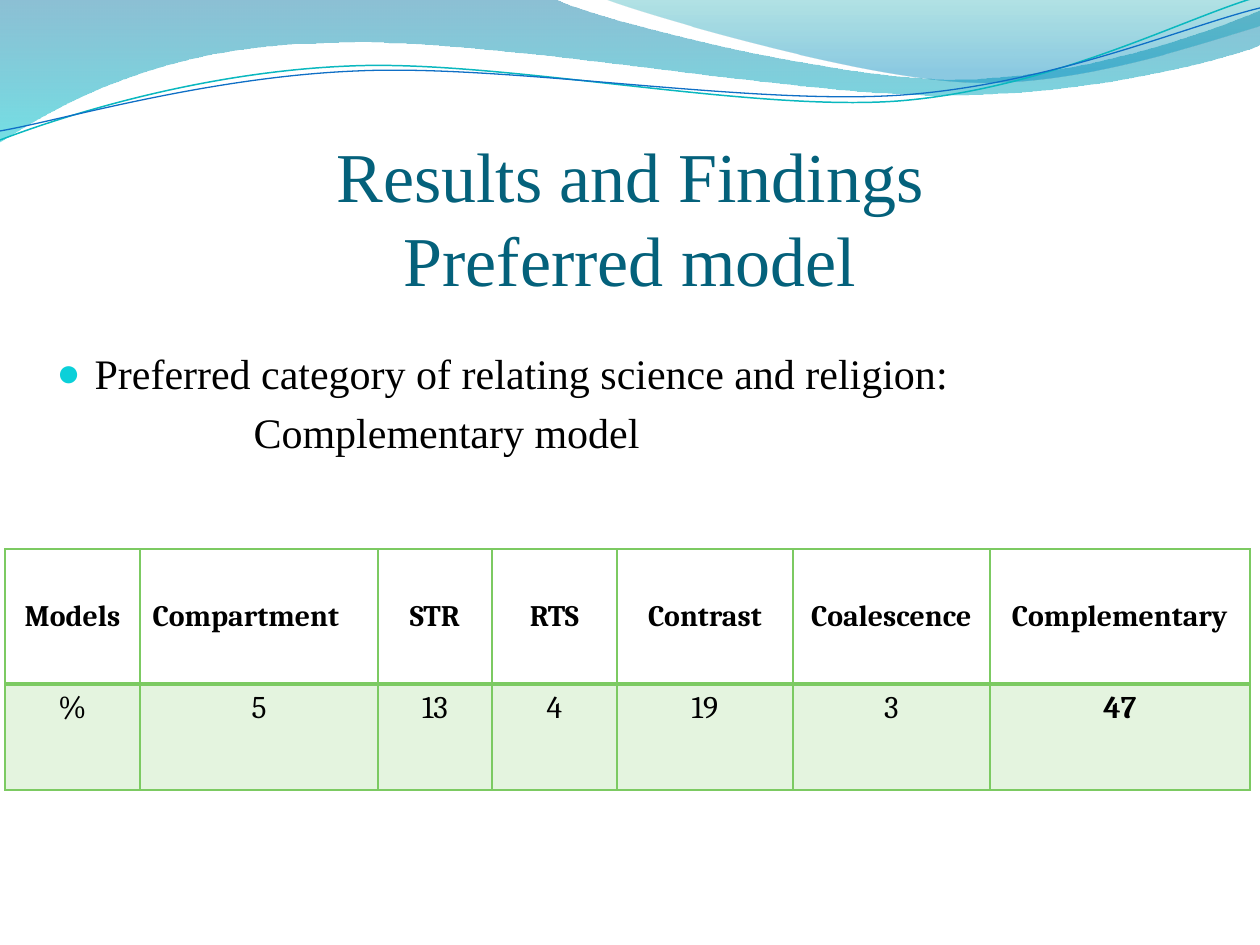
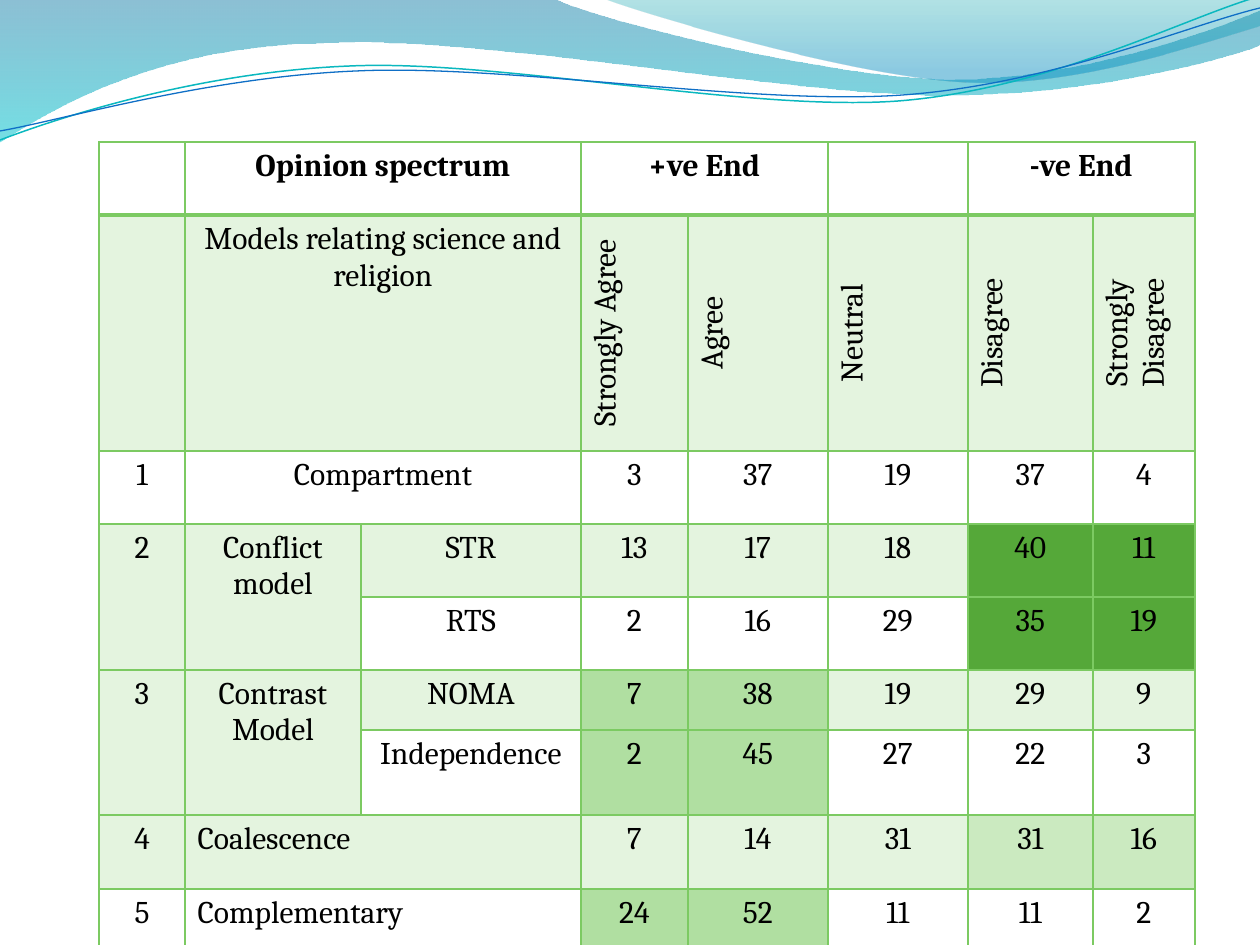
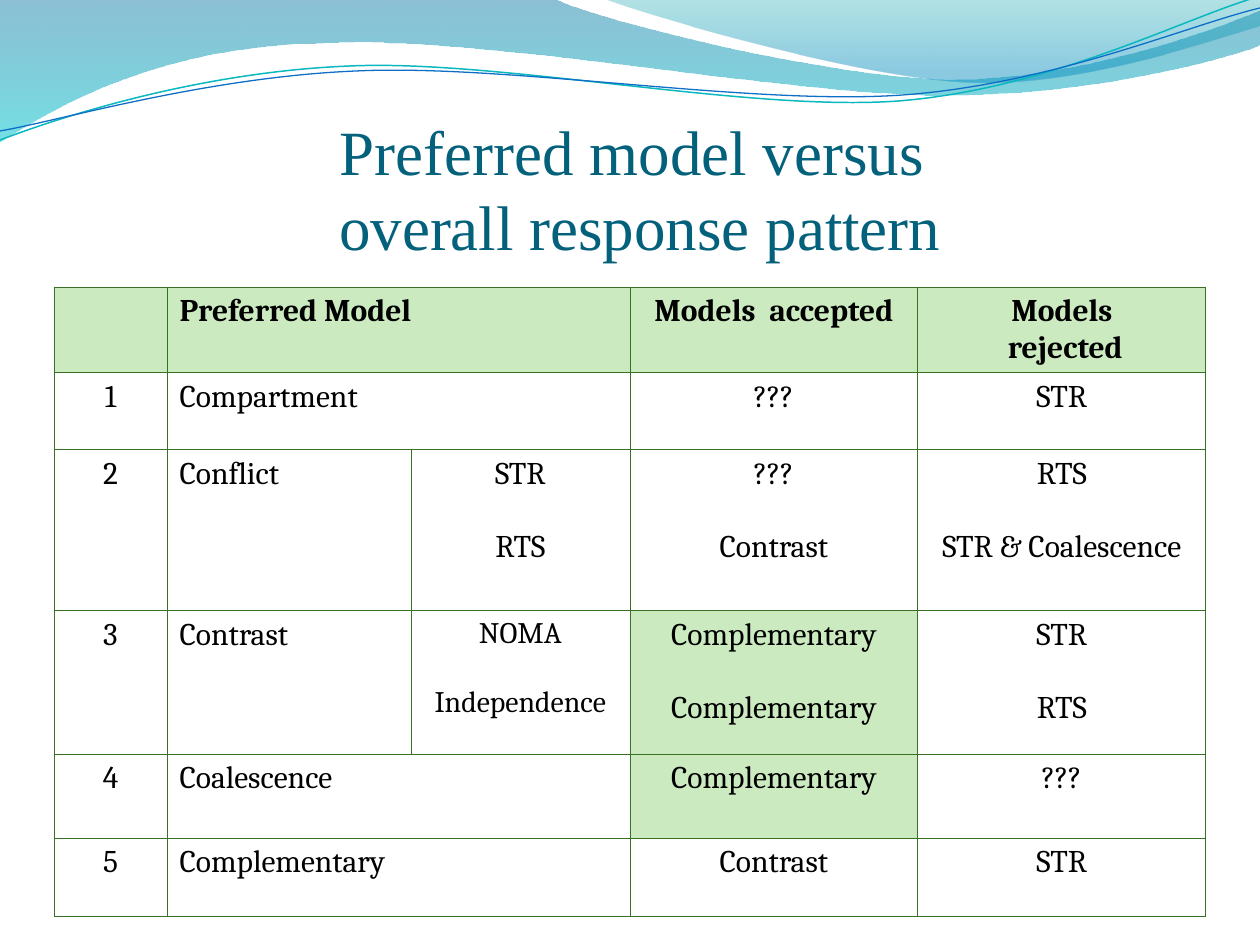
from lxml import etree
from pptx import Presentation
from pptx import util as u
from pptx.dml.color import RGBColor
from pptx.enum import text
from pptx.oxml.ns import qn

PX = 914400 / 126
COLORS = {
    "title": "04617B", "ink": "000000", "bullet": "0BD0D9",
    "leaf": "7CCA62", "pale": "CBEAC0", "mid": "B0DFA1", "deep": "55A839", "forest": "387026",
    "sea": "0074A1", "aqua": "00C6CF", "teal": "00A1A9", "sky": "008BBF",
    "thread": "0AB8BF", "blue": "0F6FC6",
}
SERIF, TABLE_FONT = "Times New Roman", "Cambria"
ALIGN = {"l": text.PP_ALIGN.LEFT, "c": text.PP_ALIGN.CENTER, "j": text.PP_ALIGN.JUSTIFY}
ANCHOR = {"t": text.MSO_ANCHOR.TOP, "m": text.MSO_ANCHOR.MIDDLE, "b": text.MSO_ANCHOR.BOTTOM}
ACROSS, DOWN = "<", "^"  # cells covered by the cell to the left or above

# Wave outlines: a pair is a line's end, six numbers are a Bezier curve
WAVES = [
    ([(0, 0), (554, -1), (600, 21, 837, 79, 955, 79), (1075, 79, 1207, 33, 1260, 11),
      (1261, 45), (1239, 55, 1096, 96, 940, 95), (784, 95, 481, 35, 324, 43),
      (163, 45, 58, 105, -1, 142), (0, 0)],
     [("sea", 0, 45), ("aqua", 1, 55)]),
    ([(604, -1), (641, 14, 859, 78, 969, 82), (1079, 87, 1211, 40, 1260, 26), (1260, 0),
      (604, -1)],
     [("teal", 0, 30), ("sky", 0.8, 45)]),
]
THREADS = [
    ([(0, 140), (60, 117, 199, 72, 349, 66), (498, 59, 747, 112, 898, 101),
      (1050, 89, 1182, 19, 1257, -3)], "thread", 0.85),
    ([(0, 131), (59, 121, 207, 77, 357, 71), (508, 64, 752, 106, 903, 95),
      (1053, 84, 1186, 26, 1260, 8)], "blue", 0.75),
]


def px(length):
    return u.Emu(round(length * PX))


def rgb(name):
    return RGBColor.from_string(COLORS[name])


def add(parent, tag, **attributes):
    return etree.SubElement(parent, qn(tag), {k: str(v) for k, v in attributes.items()})


def set_opacity(parent, *percents):
    for color, percent in zip(list(parent.iter(qn("a:srgbClr"))), percents):
        add(color, "a:alpha", val=percent * 1000)


def bend(shape, segments):
    """Join the three lines drawn for each six-number segment into one curve."""
    lines = iter(list(shape.element.iter(qn("a:lnTo"))))
    for segment in segments[1:]:
        first = next(lines)
        if len(segment) == 6:
            curve = etree.Element(qn("a:cubicBezTo"))
            first.addprevious(curve)
            for line in (first, next(lines), next(lines)):
                curve.append(line[0])
                line.getparent().remove(line)


def write(frame, lines, font=SERIF, size=18, color="ink", bold=False, align="c", gap=None):
    """Fill a text frame with one paragraph a line; gap is the space between them.
    A vertical tab breaks a line within its paragraph."""
    for index, line in enumerate(lines):
        paragraph = frame.add_paragraph() if index else frame.paragraphs[0]
        paragraph.alignment = ALIGN[align]
        if gap and index:
            paragraph.space_before = u.Pt(gap)
        for part, words in enumerate(line.split("\v")):
            if part:
                paragraph.add_line_break()
                add(paragraph._p[-1], "a:rPr", sz=size * 100)
            run = paragraph.add_run()
            run.text = words
            run.font.name, run.font.size, run.font.bold = font, u.Pt(size), bold
            run.font.color.rgb = rgb(color)


class Deck:
    def __init__(self):
        self.prs = Presentation()
        self.prs.slide_width, self.prs.slide_height = px(1260), px(945)
        self.slide = None

    def new_slide(self, layout):
        self.slide = self.prs.slides.add_slide(self.prs.slide_layouts[layout])

    def outline(self, segments, closed):
        points = [s[i:i + 2] for s in segments for i in range(0, len(s), 2)]
        builder = self.slide.shapes.build_freeform(*points[0], scale=PX)
        builder.add_line_segments(points[1:], close=closed)
        shape = builder.convert_to_shape()
        shape.shadow.inherit = False
        bend(shape, segments)
        return shape

    def waves_on_master(self):
        """Draw the waves once and hand them to the slide master."""
        parts = []
        for segments, stops in WAVES:
            wave = self.outline(segments, True)
            wave.line.fill.background()
            wave.fill.gradient()
            wave.fill.gradient_angle = 270
            for stop, (color, position, _) in zip(wave.fill.gradient_stops, stops):
                stop.color.rgb, stop.position = rgb(color), position
            set_opacity(wave.element, *(opacity for _, _, opacity in stops))
            parts.append(wave)
        for segments, color, width in THREADS:
            thread = self.outline(segments, False)
            thread.fill.background()
            thread.line.color.rgb, thread.line.width = rgb(color), u.Pt(width)
            parts.append(thread)
        for index, part in enumerate(parts, 2):
            self.prs.slide_master.shapes.element.insert(index, part.element)

    def place(self, holder, box):
        holder.left, holder.top, holder.width, holder.height = map(px, box)
        holder.text_frame.auto_size = text.MSO_AUTO_SIZE.NONE
        return holder.text_frame

    def title(self, box, lines, size, anchor, side=0):
        frame = self.place(self.slide.shapes.title, box)
        frame.margin_left = frame.margin_right = px(side)
        frame.margin_top, frame.margin_bottom = px(6), 0
        frame.vertical_anchor = ANCHOR[anchor]
        write(frame, lines, size=size, color="title")

    def body(self, box, lines, indents):
        """A bullet for the first line; the others stand plain at their indent."""
        frame = self.place(self.slide.placeholders[1], box)
        write(frame, lines, size=24, align="j")
        for index, (paragraph, indent) in enumerate(zip(frame.paragraphs, indents)):
            props = paragraph._p.get_or_add_pPr()
            props.set("marL", str(px(indent)))
            props.set("indent", str(0 if index else -px(indent)))
            if index:
                add(props, "a:buNone")
            else:
                add(add(props, "a:buClr"), "a:srgbClr", val=COLORS["bullet"])
                add(props, "a:buSzPct", val=95000)
                add(props, "a:buChar", char="●")

    def border(self, cell, color, widths):
        props = cell._tc.get_or_add_tcPr()
        for side in "LRTB":
            line = add(props, f"a:ln{side}", w=u.Pt(widths.get(side, widths["all"])))
            add(add(line, "a:solidFill"), "a:srgbClr", val=COLORS[color])

    def table(self, at, columns, heights, rows, line, width, rule=None, shades=(),
              header=None, special=None):
        """shades: (rows, columns, colour, opacity), the later over the earlier.
        header and special: formats for the first row and for single cells."""
        box = map(px, (*at, sum(columns), sum(heights)))
        table = self.slide.shapes.add_table(len(rows), len(columns), *box).table
        table.first_row = table.horz_banding = False
        for column, size in zip(table.columns, columns):
            column.width = px(size)
        for row, size in zip(table.rows, heights):
            row.height = px(size)
        fills = {(r, c): shade for rs, cs, *shade in shades for r in rs for c in cs}
        for r, row in enumerate(rows):
            for c, content in enumerate(row):
                cell = table.cell(r, c)
                widths = {"all": width}
                if rule and r < 2:
                    widths["B" if r == 0 else "T"] = rule
                self.border(cell, line, widths)
                if (r, c) in fills:
                    color, opacity = fills[r, c]
                    cell.fill.solid()
                    cell.fill.fore_color.rgb = rgb(color)
                    if opacity < 100:
                        set_opacity(cell._tc.tcPr.find(qn("a:solidFill")), opacity)
                else:
                    cell.fill.background()
                style = {"font": TABLE_FONT, "anchor": "t", "turned": False,
                         **(header or {} if r == 0 else {}), **(special or {}).get((r, c), {})}
                cell.vertical_anchor = ANCHOR[style.pop("anchor")]
                if style.pop("turned"):
                    cell._tc.tcPr.set("vert", "vert270")
                if content and content not in (ACROSS, DOWN):
                    write(cell.text_frame, content.split("\n"), **style)
        for r, row in enumerate(rows):
            for c, content in enumerate(row):
                if content == ACROSS:
                    table.cell(r, c - 1).merge(table.cell(r, c))
                elif content == DOWN:
                    table.cell(r - 1, c).merge(table.cell(r, c))


def preferred_model(deck):
    deck.new_slide(0)
    deck.waves_on_master()
    deck.title((124, 117, 1012, 184), ["Results and Findings\vPreferred model"], 40, "b")
    deck.body((44, 341, 1216, 297),
              ["Preferred category of relating science and religion:", "Complementary model"],
              (38, 197))
    deck.table(
        (5, 549), (135, 238, 114, 125, 176, 197, 260), (135, 106),
        [["Models", "Compartment", "STR", "RTS", "Contrast", "Coalescence", "Complementary"],
         ["%", "5", "13", "4", "19", "3", "47"]],
        "leaf", 1, rule=2, shades=[([1], range(7), "leaf", 20)],
        header={"size": 17, "bold": True, "anchor": "m"},
        special={(0, 1): {"align": "l"}, (1, 6): {"bold": True}})


def opinion_spectrum(deck):
    deck.new_slide(6)
    deck.table(
        (99, 142), (86, 176, 220, 107, 140, 140, 125, 102),
        (73, 202, 73, 73, 73, 60, 85, 74, 74),
        [["", "Opinion spectrum", ACROSS, "+ve End", ACROSS, "", "-ve End", ACROSS],
         ["", "Models relating science and religion", ACROSS, "Strongly Agree", "Agree",
          "Neutral", "Disagree", "Strongly Disagree"],
         ["1", "Compartment", ACROSS, "3", "37", "19", "37", "4"],
         ["2", "Conflict model", "STR", "13", "17", "18", "40", "11"],
         [DOWN, DOWN, "RTS", "2", "16", "29", "35", "19"],
         ["3", "Contrast Model", "NOMA", "7", "38", "19", "29", "9"],
         [DOWN, DOWN, "Independence", "2", "45", "27", "22", "3"],
         ["4", "Coalescence", ACROSS, "7", "14", "31", "31", "16"],
         ["5", "Complementary", ACROSS, "24", "52", "11", "11", "2"]],
        "leaf", 1, rule=2,
        shades=[(range(1, 9, 2), range(8), "leaf", 20),
                ((3, 4), (6, 7), "deep", 100),
                ((5, 6, 8), (3, 4), "mid", 100),
                ([7], (6, 7), "pale", 100)],
        header={"bold": True},
        special={**{(1, c): {"turned": True} for c in range(3, 8)},
                 **{(r, 1): {"align": "l"} for r in (7, 8)}})


def response_pattern(deck):
    deck.new_slide(5)
    deck.title((65, 106, 1150, 165), ["Preferred model versus ", "overall response pattern"],
               36, "t", side=13)
    paired = {(r, c): {"gap": 21} for r in (2, 3) for c in (2, 3, 4)}
    deck.table(
        (54, 287), (113, 244, 219, 288, 288), (83, 77, 161, 144, 84, 78),
        [["", "Preferred Model", ACROSS, "Models  accepted", "Models\n rejected"],
         ["1", "Compartment", ACROSS, "???", "STR"],
         ["2", "Conflict", "STR\nRTS", "???\nContrast", "RTS\nSTR & Coalescence"],
         ["3", "Contrast", "NOMA\nIndependence", "Complementary\nComplementary", "STR\nRTS"],
         ["4", "Coalescence", ACROSS, "Complementary", "???"],
         ["5", "Complementary", ACROSS, "Contrast", "STR"]],
        "forest", 0.5,
        shades=[([0], range(5), "pale", 100), ((3, 4), [3], "pale", 100)],
        header={"bold": True},
        special={**{(r, 1): {"align": "l"} for r in range(6)}, **paired,
                 (3, 2): {"size": 17, "gap": 20}})


def main():
    deck = Deck()
    preferred_model(deck)
    opinion_spectrum(deck)
    response_pattern(deck)
    deck.prs.save("out.pptx")


if __name__ == "__main__":
    main()
